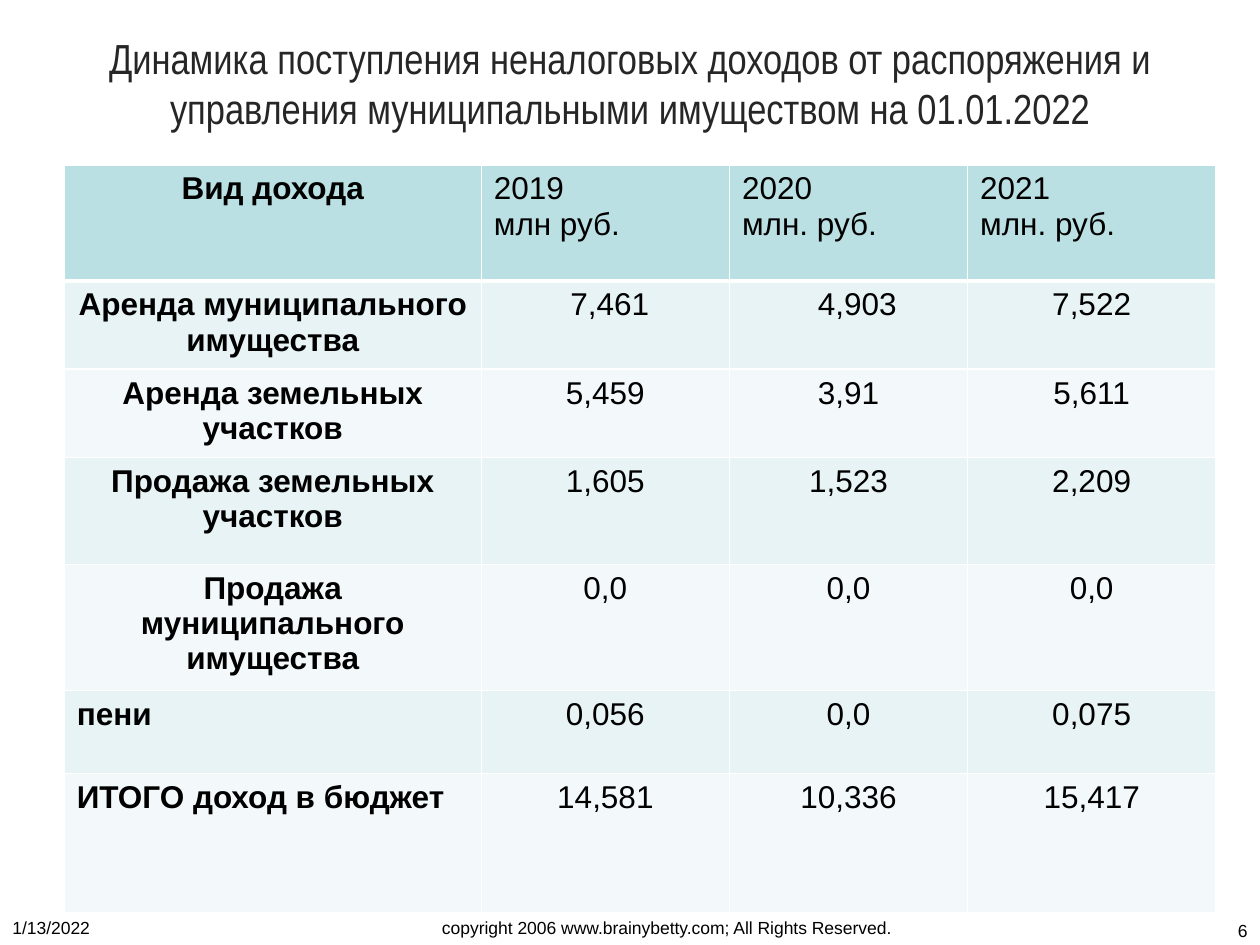
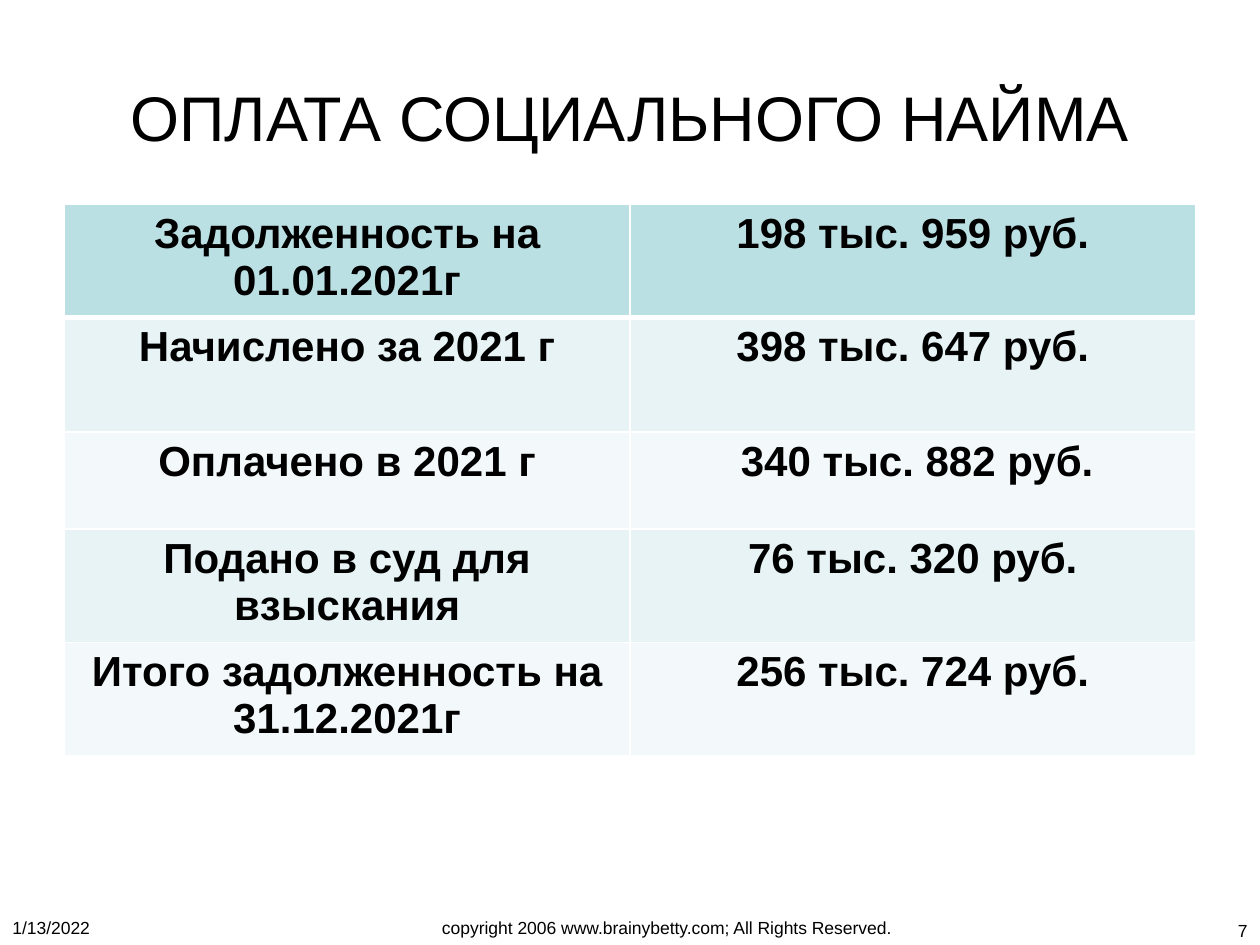
"""Builds two slides on municipal property income and social rent payments."""
import dataclasses
import typing

import pptx
import pptx.dml.color
import pptx.enum.text
import pptx.oxml.ns
import pptx.presentation
import pptx.slide
import pptx.table
import pptx.text.text
import pptx.util
from lxml import etree

Inches = pptx.util.Inches
Pt = pptx.util.Pt
ALIGN = pptx.enum.text.PP_ALIGN
ANCHOR = pptx.enum.text.MSO_ANCHOR

BLACK, DARK, WHITE = "000000", "262626", "FFFFFF"
HEADER, BANDS = "BBE0E3", ("E7F3F4", "F3F9FA")
THIN, THICK = 1, 3
CELL_MARGIN = 0.1


@dataclasses.dataclass(frozen=True)
class Style:
    size: float
    font: str = "Arial"
    color: str = BLACK
    bold: bool = False


@dataclasses.dataclass(frozen=True)
class Label:
    text: str
    box: tuple[float, float, float, float]
    style: Style
    align: ALIGN = ALIGN.CENTER
    anchor: ANCHOR = ANCHOR.TOP


@dataclasses.dataclass(frozen=True)
class Grid:
    top: float
    cols: tuple[float, ...]
    heights: tuple[float, ...]
    rows: tuple[tuple[str, ...], ...]
    size: float
    bold_cols: frozenset[int]
    left_cells: frozenset[tuple[int, int]] = frozenset()
    indents: dict[tuple[int, int], float] = dataclasses.field(default_factory=dict)


@dataclasses.dataclass(frozen=True)
class Page:
    number: int
    title: Label
    grid: Grid


FOOTER = Style(10)
LEFT = 0.51

INCOME = Page(
    6,
    Label("Динамика поступления неналоговых доходов от распоряжения и "
          "управления муниципальными имуществом на 01.01.2022",
          (0.5, 0, 9, 1.31), Style(24, "Arial Narrow", DARK), anchor=ANCHOR.MIDDLE),
    Grid(
        top=1.31,
        cols=(3.31, 1.97, 1.89, 1.97),
        heights=(0.92, 0.66, 0.66, 0.85, 0.94, 0.66, 1.1),
        rows=(
            ("Вид дохода", "2019\nмлн руб.", "2020\nмлн. руб.", "2021\nмлн. руб."),
            ("Аренда муниципального имущества", "7,461", "4,903", "7,522"),
            ("Аренда земельных участков", "5,459", "3,91", "5,611"),
            ("Продажа земельных участков", "1,605", "1,523", "2,209"),
            ("Продажа муниципального имущества", "0,0", "0,0", "0,0"),
            ("пени", "0,056", "0,0", "0,075"),
            ("ИТОГО доход в бюджет", "14,581", "10,336", "15,417"),
        ),
        size=18,
        bold_cols=frozenset({0}),
        left_cells=frozenset({(0, 1), (0, 2), (0, 3), (5, 0), (6, 0)}),
        indents={(1, 1): 0.07, (1, 2): 0.14},
    ),
)

RENT = Page(
    7,
    Label("ОПЛАТА СОЦИАЛЬНОГО НАЙМА", (0.5, 0.3, 9, 1.25), Style(36),
          anchor=ANCHOR.MIDDLE),
    Grid(
        top=1.62,
        cols=(4.49, 4.49),
        heights=(0.84, 0.91, 0.77, 0.84, 0.84),
        rows=(
            ("Задолженность на 01.01.2021г", "198 тыс. 959 руб."),
            ("Начислено за 2021 г", "398 тыс. 647 руб."),
            ("Оплачено в 2021 г", "340 тыс. 882 руб."),
            ("Подано в суд для взыскания", "76 тыс. 320 руб."),
            ("Итого задолженность на 31.12.2021г", "256 тыс. 724 руб."),
        ),
        size=24,
        bold_cols=frozenset({0, 1}),
        indents={(2, 1): 0.07},
    ),
)


def rgb(color: str) -> pptx.dml.color.RGBColor:
    return pptx.dml.color.RGBColor.from_string(color)


def write(tf: pptx.text.text.TextFrame, text: str, style: Style, align: ALIGN) -> None:
    for i, line in enumerate(text.split("\n")):
        p = tf.add_paragraph() if i else tf.paragraphs[0]
        p.alignment = align
        r = p.add_run()
        r.text = line
        r.font.size = Pt(style.size)
        r.font.name = style.font
        r.font.bold = style.bold
        r.font.color.rgb = rgb(style.color)


def add_label(s: pptx.slide.Slide, label: Label) -> None:
    sp = s.shapes.add_textbox(*map(Inches, label.box))
    tf = sp.text_frame
    tf.word_wrap = True
    tf.vertical_anchor = label.anchor
    write(tf, label.text, label.style, label.align)


def set_borders(cell: pptx.table._Cell, widths: typing.Mapping[str, float]) -> None:
    qn = pptx.oxml.ns.qn
    tc_pr = cell._tc.get_or_add_tcPr()
    for side, width in widths.items():
        ln = etree.SubElement(tc_pr, qn(f"a:ln{side}"), w=str(Pt(width)))
        fill = etree.SubElement(ln, qn("a:solidFill"))
        etree.SubElement(fill, qn("a:srgbClr"), val=WHITE)


def add_grid(s: pptx.slide.Slide, grid: Grid) -> None:
    table = s.shapes.add_table(
        len(grid.rows), len(grid.cols), Inches(LEFT), Inches(grid.top),
        Inches(sum(grid.cols)), Inches(sum(grid.heights))).table
    table.horz_banding = False
    for col, width in zip(table.columns, grid.cols):
        col.width = Inches(width)
    for row, height in zip(table.rows, grid.heights):
        row.height = Inches(height)
    for i, texts in enumerate(grid.rows):
        fill = BANDS[(i - 1) % 2] if i else HEADER
        for j, text in enumerate(texts):
            cell = table.cell(i, j)
            set_borders(cell, {"L": THIN, "R": THIN,
                               "T": THICK if i == 1 else THIN,
                               "B": THICK if i == 0 else THIN})
            cell.fill.solid()
            cell.fill.fore_color.rgb = rgb(fill)
            cell.margin_left = Inches(CELL_MARGIN + grid.indents.get((i, j), 0))
            align = ALIGN.LEFT if (i, j) in grid.left_cells else ALIGN.CENTER
            write(cell.text_frame, text,
                  Style(grid.size, bold=j in grid.bold_cols), align)


def add_footer(s: pptx.slide.Slide, number: int) -> None:
    for label in (
        Label("1/13/2022", (0, 7.23, 2.33, 0.27), FOOTER, ALIGN.LEFT),
        Label("copyright 2006 www.brainybetty.com; All Rights Reserved.",
              (2.58, 7.23, 5.42, 0.27), FOOTER),
        Label(str(number), (8.67, 7.25, 1.33, 0.25), FOOTER, ALIGN.RIGHT),
    ):
        add_label(s, label)


def add_page(prs: pptx.presentation.Presentation, page: Page) -> None:
    s = prs.slides.add_slide(prs.slide_layouts[6])
    s.background.fill.solid()
    s.background.fill.fore_color.rgb = rgb(WHITE)
    add_label(s, page.title)
    add_grid(s, page.grid)
    add_footer(s, page.number)


def main() -> None:
    prs = pptx.Presentation()
    prs.slide_width = Inches(10)
    prs.slide_height = Inches(7.5)
    for page in (INCOME, RENT):
        add_page(prs, page)
    prs.save("out.pptx")


if __name__ == "__main__":
    main()
